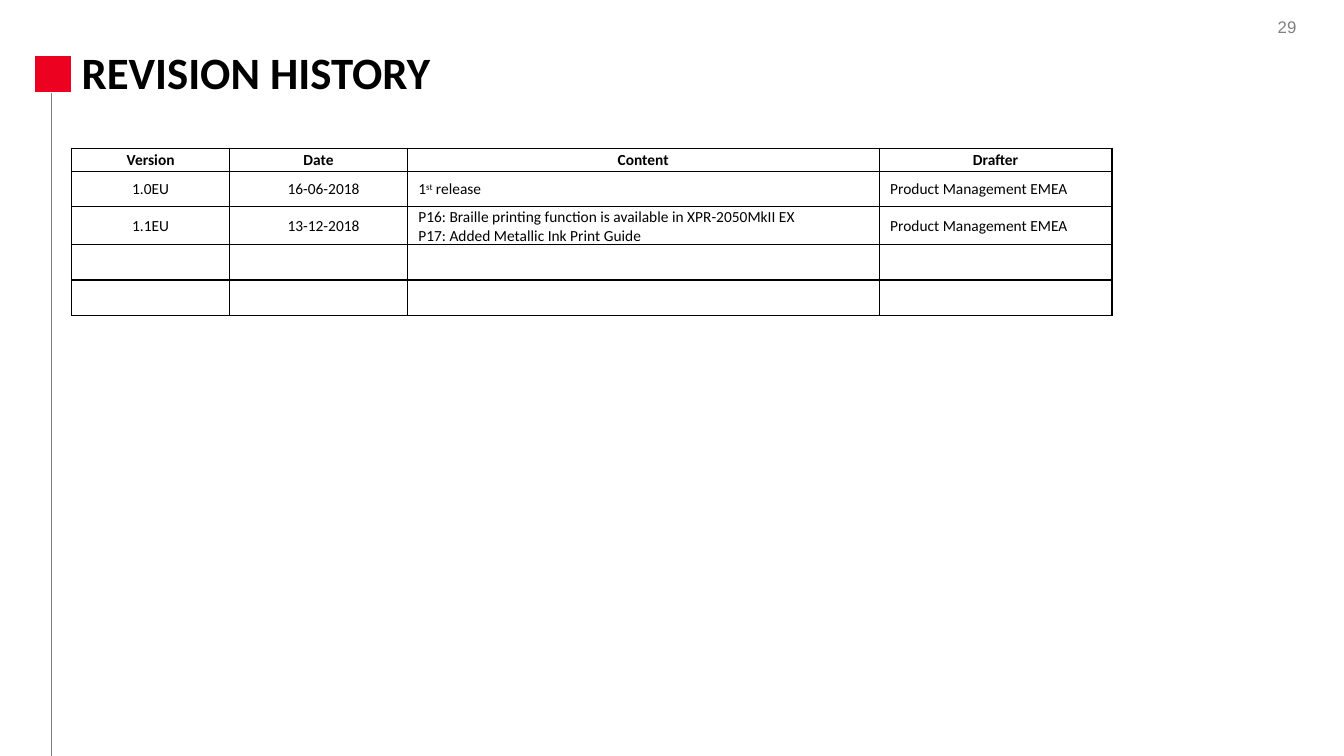
"""Build the revision history slide."""
from lxml import etree
from pptx import Presentation
from pptx.dml.color import RGBColor
from pptx.enum.shapes import MSO_CONNECTOR, MSO_SHAPE
from pptx.enum.text import MSO_ANCHOR, MSO_AUTO_SIZE, PP_ALIGN
from pptx.oxml.ns import qn
from pptx.util import Inches, Pt

TITLE = "REVISION HISTORY"
PAGE = "29"
HEADER = ("Version", "Date", "Content", "Drafter")
REVISIONS = [
    ("1.0EU", "16-06-2018", "1^st^ release", "Product Management EMEA"),
    ("1.1EU", "13-12-2018",
     "P16: Braille printing function is available in XPR-2050MkII EX\n"
     "P17: Added Metallic Ink Print Guide", "Product Management EMEA"),
    ("",) * 4,
    ("",) * 4,
]
COLUMNS = (1.57, 1.76, 4.68, 2.31)
ROWS = (0.23,) + (0.35,) * len(REVISIONS)
CENTRED_COLUMNS = 2

WIDTH, HEIGHT = 13.33, 7.5
LEFT, TABLE_TOP = 0.71, 1.47
MARK_LEFT, MARK_TOP, MARK_SIZE = 0.35, 0.56, 0.35
RULE_X = 0.51

BLACK = RGBColor(0, 0, 0)
GREY = RGBColor(0x80, 0x80, 0x80)
RED = RGBColor(0xEC, 0x01, 0x21)
CENTER, LEFT_ALIGN = PP_ALIGN.CENTER, PP_ALIGN.LEFT
MIDDLE = MSO_ANCHOR.MIDDLE


def style(p, size, name, color, bold, align):
    p.alignment = align
    p.font.size, p.font.name, p.font.bold = Pt(size), name, bold
    p.font.color.rgb = color


def add_borders(cell):
    tcPr = cell._tc.get_or_add_tcPr()
    for i, side in enumerate(("a:lnL", "a:lnR", "a:lnT", "a:lnB")):
        ln = etree.Element(qn(side), w=str(Pt(1)))
        fill = etree.SubElement(ln, qn("a:solidFill"))
        etree.SubElement(fill, qn("a:srgbClr"), val=str(BLACK))
        tcPr.insert(i, ln)


def fill_cell(cell, text, row, col):
    cell.fill.background()
    add_borders(cell)
    cell.vertical_anchor = MIDDLE
    cell.margin_left = Inches(0.11 if row and col else 0.01)
    cell.margin_top = cell.margin_right = Inches(0.01)
    cell.margin_bottom = 0
    tf = cell.text_frame
    for i, line in enumerate(text.split("\n")):
        p = tf.add_paragraph() if i else tf.paragraphs[0]
        centred = row == 0 or col < CENTRED_COLUMNS
        style(p, 11, "Calibri", BLACK, row == 0, CENTER if centred else LEFT_ALIGN)
        for j, part in enumerate(line.split("^")):
            if part:
                r = p.add_run()
                r.text = part
                if j % 2:
                    r._r.get_or_add_rPr().set("baseline", "30000")


def add_mark(s):
    mark = s.shapes.add_shape(MSO_SHAPE.RECTANGLE, Inches(MARK_LEFT), Inches(MARK_TOP),
                              Inches(MARK_SIZE), Inches(MARK_SIZE))
    mark.shadow.inherit = False
    mark.fill.solid()
    mark.fill.fore_color.rgb = mark.line.color.rgb = RED
    mark.line.width = Pt(1)
    rule = s.shapes.add_connector(MSO_CONNECTOR.STRAIGHT, Inches(RULE_X), Inches(0.92),
                                  Inches(RULE_X), Inches(HEIGHT))
    rule.line.color.rgb, rule.line.width = GREY, Pt(1)
    etree.SubElement(rule._element.spPr, qn("a:effectLst"))


def add_history(s):
    table = s.shapes.add_table(len(ROWS), len(COLUMNS), Inches(LEFT), Inches(TABLE_TOP),
                               Inches(sum(COLUMNS)), Inches(sum(ROWS))).table
    table.first_row = table.horz_banding = False
    for column, width in zip(table.columns, COLUMNS):
        column.width = Inches(width)
    for row, (height, texts) in enumerate(zip(ROWS, [HEADER] + REVISIONS)):
        table.rows[row].height = Inches(height)
        for col, text in enumerate(texts):
            fill_cell(table.cell(row, col), text, row, col)


def main():
    prs = Presentation()
    prs.slide_width, prs.slide_height = Inches(WIDTH), Inches(HEIGHT)
    s = prs.slides.add_slide(prs.slide_layouts[5])

    title = s.shapes.title
    title.left, title.top = Inches(LEFT), Inches(0.39)
    title.width, title.height = Inches(sum(COLUMNS)), Inches(0.7)
    tf = title.text_frame
    tf.text = TITLE
    tf.auto_size, tf.vertical_anchor = MSO_AUTO_SIZE.NONE, MIDDLE
    tf.paragraphs[0].line_spacing = 0.9
    style(tf.paragraphs[0], 32, "Calibri", BLACK, True, LEFT_ALIGN)

    number = s.shapes.add_textbox(Inches(12.42), Inches(0.12), Inches(0.69), Inches(0.3))
    tf = number.text_frame
    tf.word_wrap = True
    tf.text = PAGE
    style(tf.paragraphs[0], 12, "Arial", GREY, False, CENTER)

    add_mark(s)
    add_history(s)
    prs.save("out.pptx")


if __name__ == "__main__":
    main()
